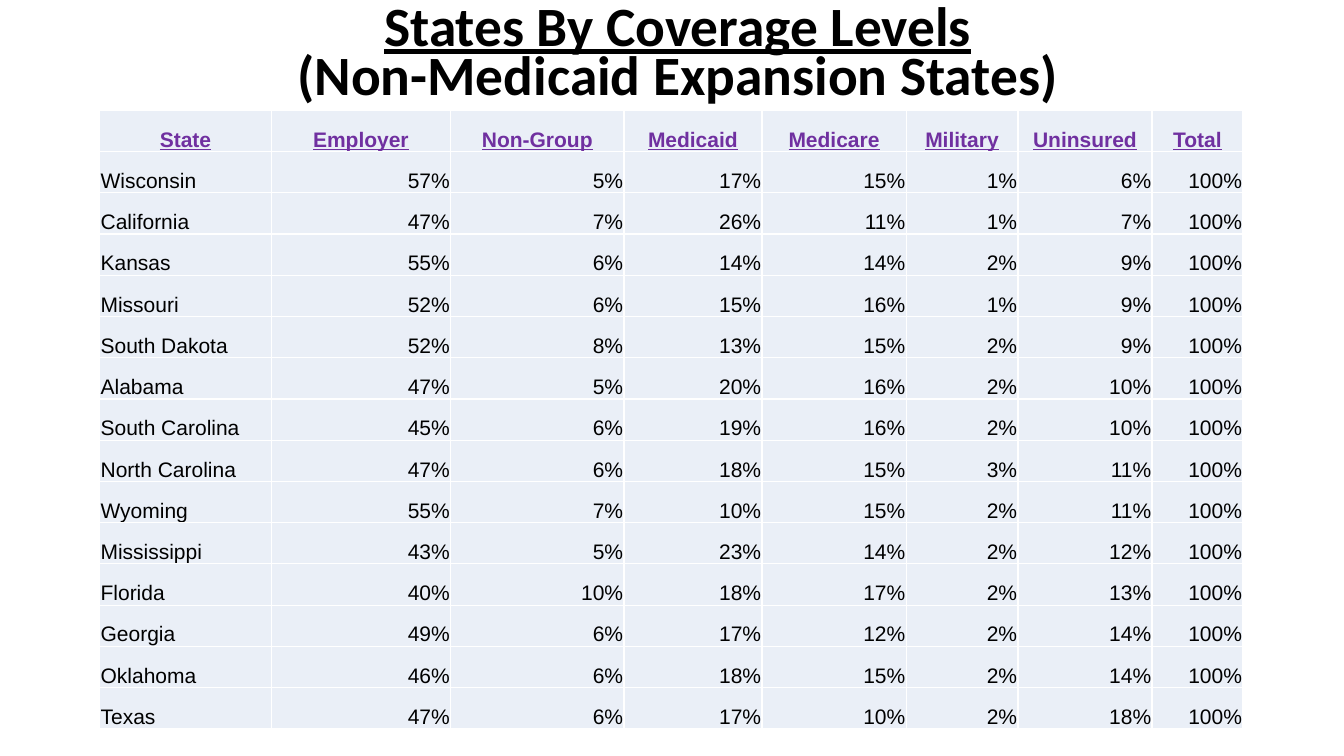
from lxml.etree import SubElement
from pptx import Presentation
from pptx.dml.color import RGBColor
from pptx.enum.text import MSO_ANCHOR, PP_ALIGN
from pptx.oxml.ns import qn
from pptx.util import Pt

BLACK = RGBColor(0x00, 0x00, 0x00)
PURPLE = RGBColor(0x70, 0x30, 0xA0)
PALE_BLUE = RGBColor(0xEA, 0xEF, 0xF7)
WHITE = RGBColor(0xFF, 0xFF, 0xFF)

COLUMNS = [
    ("State", 122.4), ("Employer", 128.2), ("Non-Group", 123.8), ("Medicaid", 98.6),
    ("Medicare", 103), ("Military", 79.9), ("Uninsured", 95.8), ("Total", 64.8),
]
ROW_HEIGHT = 29.47
COVERAGE = [
    ("Wisconsin", 57, 5, 17, 15, 1, 6),
    ("California", 47, 7, 26, 11, 1, 7),
    ("Kansas", 55, 6, 14, 14, 2, 9),
    ("Missouri", 52, 6, 15, 16, 1, 9),
    ("South Dakota", 52, 8, 13, 15, 2, 9),
    ("Alabama", 47, 5, 20, 16, 2, 10),
    ("South Carolina", 45, 6, 19, 16, 2, 10),
    ("North Carolina", 47, 6, 18, 15, 3, 11),
    ("Wyoming", 55, 7, 10, 15, 2, 11),
    ("Mississippi", 43, 5, 23, 14, 2, 12),
    ("Florida", 40, 10, 18, 17, 2, 13),
    ("Georgia", 49, 6, 17, 12, 2, 14),
    ("Oklahoma", 46, 6, 18, 15, 2, 14),
    ("Texas", 47, 6, 17, 10, 2, 18),
]


def style_font(font, name, size, color, bold, underline):
    font.name = name
    font.size = Pt(size)
    font.color.rgb = color
    font.bold = bold
    font.underline = underline


def add_title(slide, lines):
    shape = slide.shapes.add_textbox(Pt(17.3), Pt(10.8), Pt(933.8), Pt(60.5))
    frame = shape.text_frame
    frame.word_wrap = True
    frame.vertical_anchor = MSO_ANCHOR.MIDDLE
    for index, (text, underline) in enumerate(lines):
        paragraph = frame.add_paragraph() if index else frame.paragraphs[0]
        paragraph.text = text
        paragraph.alignment = PP_ALIGN.CENTER
        paragraph.line_spacing = Pt(35)
        style_font(paragraph.font, "Calibri", 39.6, BLACK, True, underline)


def add_borders(cell, color, width):
    properties = cell._tc.get_or_add_tcPr()
    for position, side in enumerate(("lnL", "lnR", "lnT", "lnB")):
        line = SubElement(properties, qn(f"a:{side}"), w=str(Pt(width)))
        fill = SubElement(line, qn("a:solidFill"))
        SubElement(fill, qn("a:srgbClr"), val=str(color))
        properties.insert(position, line)


def fill_cell(cell, text, alignment, is_header):
    cell.margin_left = cell.margin_right = cell.margin_top = Pt(0.6)
    cell.margin_bottom = Pt(0)
    cell.vertical_anchor = MSO_ANCHOR.BOTTOM
    cell.fill.solid()
    cell.fill.fore_color.rgb = PALE_BLUE
    add_borders(cell, WHITE, 1)
    paragraph = cell.text_frame.paragraphs[0]
    paragraph.text = text
    paragraph.alignment = alignment
    color = PURPLE if is_header else BLACK
    style_font(paragraph.font, "Arial", 15, color, is_header, is_header)


def add_coverage_table(slide):
    rows = [[name for name, width in COLUMNS]]
    rows += [[state, *(f"{share}%" for share in shares), "100%"] for state, *shares in COVERAGE]
    total_width = sum(width for name, width in COLUMNS)
    shape = slide.shapes.add_table(
        len(rows), len(COLUMNS), Pt(71.3), Pt(78.8), Pt(total_width), Pt(ROW_HEIGHT * len(rows))
    )
    table = shape.table
    for column, (name, width) in zip(table.columns, COLUMNS):
        column.width = Pt(width)
    for row_index, texts in enumerate(rows):
        table.rows[row_index].height = Pt(ROW_HEIGHT)
        for column_index, text in enumerate(texts):
            is_header = row_index == 0
            if is_header:
                alignment = PP_ALIGN.CENTER
            else:
                alignment = PP_ALIGN.RIGHT if column_index else PP_ALIGN.LEFT
            fill_cell(table.cell(row_index, column_index), text, alignment, is_header)


def main():
    presentation = Presentation()
    presentation.slide_width = Pt(960)
    presentation.slide_height = Pt(540)
    slide = presentation.slides.add_slide(presentation.slide_layouts[6])
    add_title(slide, [
        ("States By Coverage Levels", True),
        ("(Non-Medicaid Expansion States)", False),
    ])
    add_coverage_table(slide)
    presentation.save("out.pptx")


if __name__ == "__main__":
    main()
